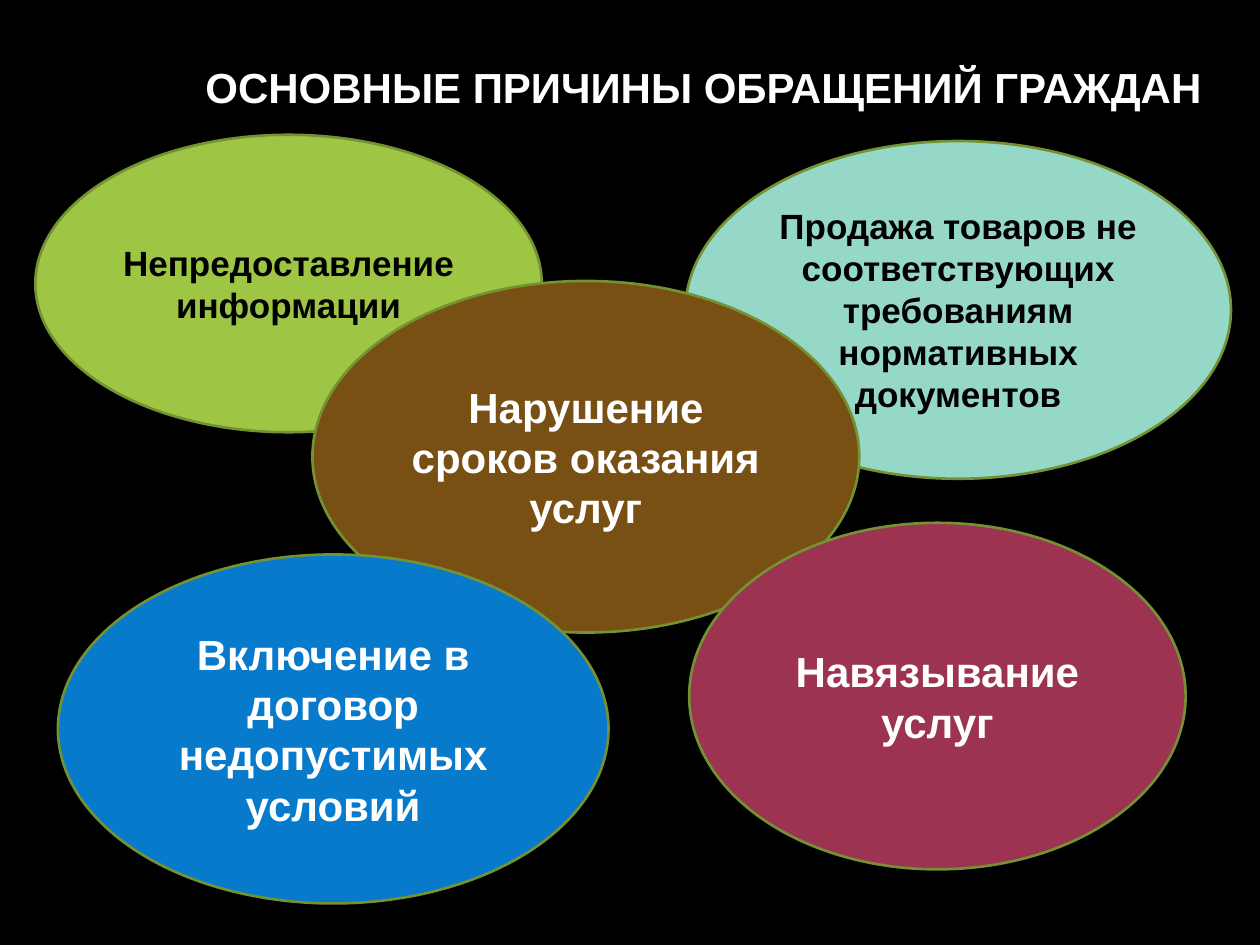
"""Builds a slide of five overlapping ellipses naming the main reasons for citizens' complaints."""
from dataclasses import dataclass

from pptx import Presentation
from pptx.dml.color import RGBColor
from pptx.enum.shapes import MSO_SHAPE
from pptx.enum.text import MSO_ANCHOR, MSO_AUTO_SIZE, PP_ALIGN
from pptx.util import Inches, Pt

OVAL = MSO_SHAPE.OVAL
TOP, MIDDLE = MSO_ANCHOR.TOP, MSO_ANCHOR.MIDDLE
LEFT, CENTER = PP_ALIGN.LEFT, PP_ALIGN.CENTER
FIT_SHAPE = MSO_AUTO_SIZE.SHAPE_TO_FIT_TEXT
TITLE_ONLY = 5


@dataclass(frozen=True)
class Theme:
    font: str = "Arial"
    black: str = "000000"
    white: str = "FFFFFF"
    outline: str = "759232"
    green: str = "9EC544"
    mint: str = "96D8C8"
    brown: str = "795014"
    blue: str = "077ACC"
    crimson: str = "9C3351"
    large: int = 24
    small: int = 20
    line: float = 1.5


theme = Theme()

prs = Presentation()
prs.slide_width, prs.slide_height = Inches(10), Inches(7.5)
col, row = prs.slide_width / 100, prs.slide_height / 100


def place(sp, left, top, width, height):
    """Position a shape in percent of the slide's width and height."""
    sp.left, sp.top = round(left * col), round(top * row)
    sp.width, sp.height = round(width * col), round(height * row)


def write(sp, text, size, color, align, anchor):
    """Fill a shape with one bold paragraph."""
    tf = sp.text_frame
    tf.text = text
    tf.word_wrap = True
    tf.vertical_anchor = anchor
    p = tf.paragraphs[0]
    p.alignment = align
    r = p.runs[0]
    r.font.name, r.font.size, r.font.bold = theme.font, Pt(size), True
    r.font.color.rgb = RGBColor.from_string(color)


s = prs.slides.add_slide(prs.slide_layouts[TITLE_ONLY])
s.background.fill.solid()
s.background.fill.fore_color.rgb = RGBColor.from_string(theme.black)

title = s.shapes.title
place(title, 15.3, 5.87, 84.6, 6.67)
write(title, "ОСНОВНЫЕ ПРИЧИНЫ ОБРАЩЕНИЙ ГРАЖДАН", theme.large, theme.white, LEFT, TOP)
title.text_frame.auto_size = FIT_SHAPE

reasons = [
    ("Непредоставление информации",
     (2.8, 14.27, 40.2, 31.47), theme.green, theme.small, theme.black),
    ("Продажа товаров не соответствующих требованиям нормативных документов",
     (54.4, 14.93, 43.3, 35.73), theme.mint, theme.small, theme.black),
    ("Нарушение сроков оказания услуг",
     (24.8, 29.73, 43.4, 37.2), theme.brown, theme.large, theme.white),
    ("Включение в договор недопустимых условий",
     (4.6, 58.67, 43.7, 36.93), theme.blue, theme.large, theme.white),
    ("Навязывание услуг",
     (54.7, 55.33, 39.4, 36.67), theme.crimson, theme.large, theme.white),
]

for text, box, fill, size, color in reasons:
    sp = s.shapes.add_shape(OVAL, 0, 0, 0, 0)
    place(sp, *box)
    sp.shadow.inherit = False
    sp.fill.solid()
    sp.fill.fore_color.rgb = RGBColor.from_string(fill)
    sp.line.color.rgb = RGBColor.from_string(theme.outline)
    sp.line.width = Pt(theme.line)
    write(sp, text, size, color, CENTER, MIDDLE)

prs.save("out.pptx")
